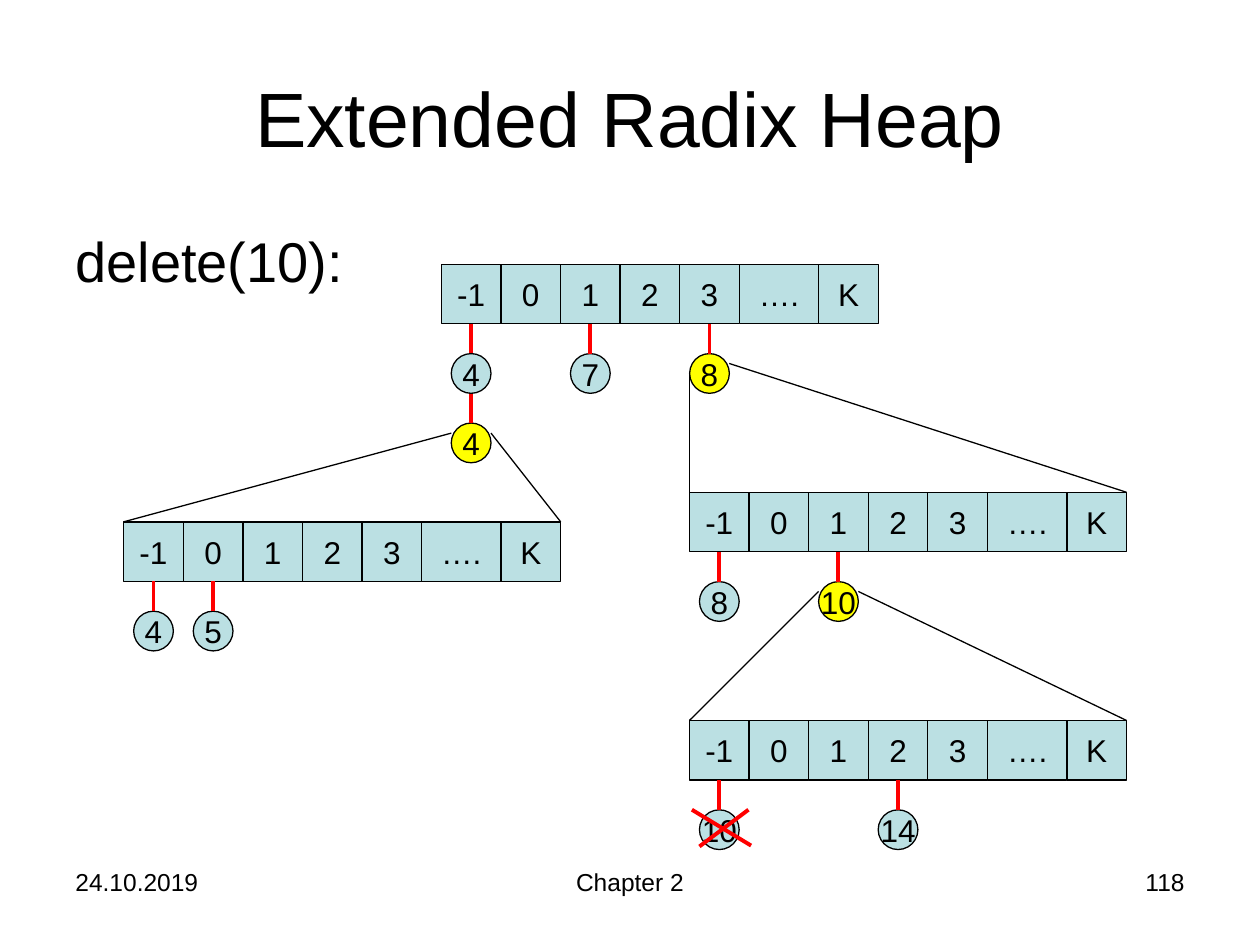
import pptx
import pptx.dml.color
import pptx.enum.shapes
import pptx.enum.text
import pptx.oxml
import pptx.util

Pt = pptx.util.Pt
SHAPE = pptx.enum.shapes.MSO_SHAPE
ALIGN = pptx.enum.text.PP_ALIGN
ANCHOR = pptx.enum.text.MSO_ANCHOR
COLORS = {"ink": "000000", "cell": "BBE0E3", "marked": "FFFF00", "stem": "FF0000"}
LABELS = ["-1", "0", "1", "2", "3", "….", "K"]
CELL, WIDE, NODE, GAP = 34.05, 45.4, 22.7, 17


def color(name):
    """Return the named colour."""
    return pptx.dml.color.RGBColor.from_string(COLORS[name])


def write(shape, text, size, align):
    """Put one formatted paragraph into a shape."""
    para = shape.text_frame.paragraphs[0]
    para.text = text
    para.alignment = align
    span = para.runs[0]
    span.font.name = "Arial"
    span.font.size = Pt(size)
    span.font.color.rgb = color("ink")
    return para


def add_text(slide, box, text, size, align=ALIGN.LEFT, anchor=ANCHOR.TOP, before=0):
    """Add a wrapping text box."""
    shape = slide.shapes.add_textbox(*map(Pt, box))
    shape.text_frame.word_wrap = True
    shape.text_frame.vertical_anchor = anchor
    write(shape, text, size, align).space_before = Pt(before)


def add_item(slide, kind, box, text, fill):
    """Add an outlined cell or node with a centred label."""
    shape = slide.shapes.add_shape(kind, *map(Pt, box))
    shape.shadow.inherit = False
    shape.fill.solid()
    shape.fill.fore_color.rgb = color(fill)
    shape.line.color.rgb = color("ink")
    shape.line.width = Pt(0.75)
    shape.text_frame.word_wrap = False
    shape.text_frame.vertical_anchor = ANCHOR.MIDDLE
    write(shape, text, 18, ALIGN.CENTER)
    return shape


def add_line(slide, start, end, name="ink", width=0.75):
    """Add a straight line between two points."""
    line = slide.shapes.add_connector(
        pptx.enum.shapes.MSO_CONNECTOR.STRAIGHT, *map(Pt, (*start, *end)))
    line.line.color.rgb = color(name)
    line.line.width = Pt(width)
    properties = line._element.spPr
    properties.append(properties.makeelement(pptx.oxml.ns.qn("a:effectLst"), {}))
    return line


def add_heap(slide, left, top, chains):
    """Add a bucket row at a corner, with chains of nodes under its cells."""
    cells = []
    offset = left
    for label in LABELS:
        width = WIDE if label == "…." else CELL
        cells.append(add_item(slide, SHAPE.RECTANGLE, (offset, top, width, CELL), label, "cell"))
        offset += width
    for column, chain in chains.items():
        x = left + column * CELL + (CELL - NODE) / 2
        for depth, (label, fill) in reversed(list(enumerate(chain))):
            y = top + CELL + GAP + depth * (NODE + GAP)
            node = add_item(slide, SHAPE.OVAL, (x, y, NODE, NODE), label, fill)
            if depth == len(chain) - 1:
                stem = add_line(slide, (x, y), (x, y), "stem", 2.25)
                stem.begin_connect(cells[column], 2)
                stem.end_connect(node, 0)


def add_fan(slide, node, row, node_drop=(5.7, 5.7), row_drop=0):
    """Spread two lines from a node to the upper corners of a row."""
    x, y = node
    left, top = row
    right = left + 6 * CELL + WIDE
    add_line(slide, (x, y + node_drop[0]), (left, top + row_drop))
    add_line(slide, (x + NODE, y + node_drop[1]), (right, top))


def add_cross(slide, left, top):
    """Strike out the node at the given corner."""
    add_line(slide, (left - 4.3, top), (left + 29.5, top + 20.5), "stem", 2.25)
    add_line(slide, (left, top + 21), (left + 28, top), "stem", 2.25)


def add_texts(slide):
    """Add the title, the operation and the footer."""
    add_text(slide, (36, 21.6, 648, 90), "Extended Radix Heap", 44, ALIGN.CENTER, ANCHOR.MIDDLE)
    add_text(slide, (36, 126, 648, 356.4), "delete(10):", 32, before=6.4)
    add_text(slide, (36, 491.8, 168, 37.5), "24.10.2019", 14)
    add_text(slide, (246, 491.8, 228, 37.5), "Chapter 2", 14, ALIGN.CENTER)
    add_text(slide, (516, 491.8, 168, 37.5), "118", 14, ALIGN.RIGHT)


def main():
    """Build and save the deck."""
    deck = pptx.Presentation()
    deck.slide_width, deck.slide_height = Pt(720), Pt(540)
    slide = deck.slides.add_slide(deck.slide_layouts[6])
    add_texts(slide)
    root, low, middle, bottom = (252.2, 151), (70.7, 298.2), (394, 281.3), (394, 411.7)
    add_heap(slide, *root, {0: [("4", "cell"), ("4", "marked")],
                            2: [("7", "cell")], 4: [("8", "marked")]})
    add_heap(slide, *low, {0: [("4", "cell")], 1: [("5", "cell")]})
    add_heap(slide, *middle, {0: [("8", "cell")], 2: [("10", "marked")]})
    add_heap(slide, *bottom, {0: [("10", "cell")], 3: [("14", "cell")]})
    add_fan(slide, (257.9, 241.8), low)
    add_fan(slide, (394, 202), middle, (11.35, 5.7), 17)
    add_fan(slide, (467.8, 332.3), bottom)
    add_cross(slide, 399.7, 462.7)
    deck.save("out.pptx")


if __name__ == "__main__":
    main()
